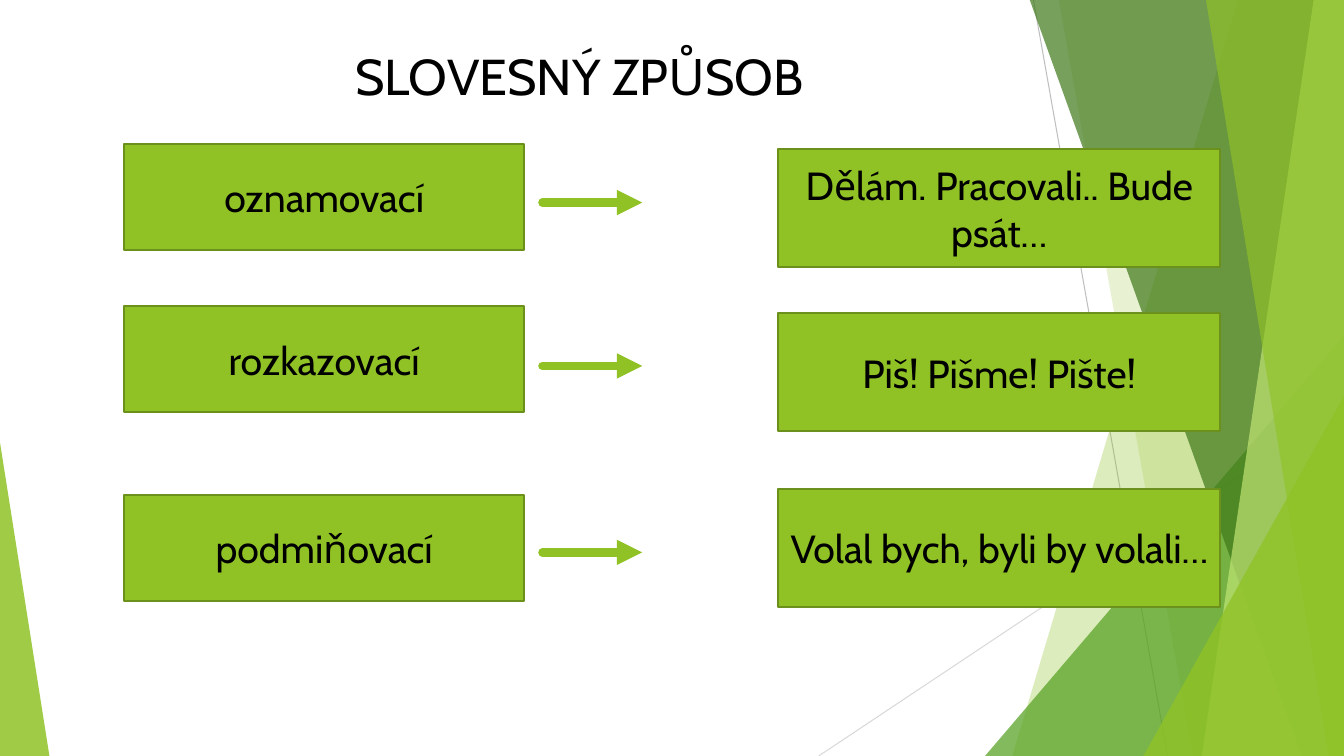
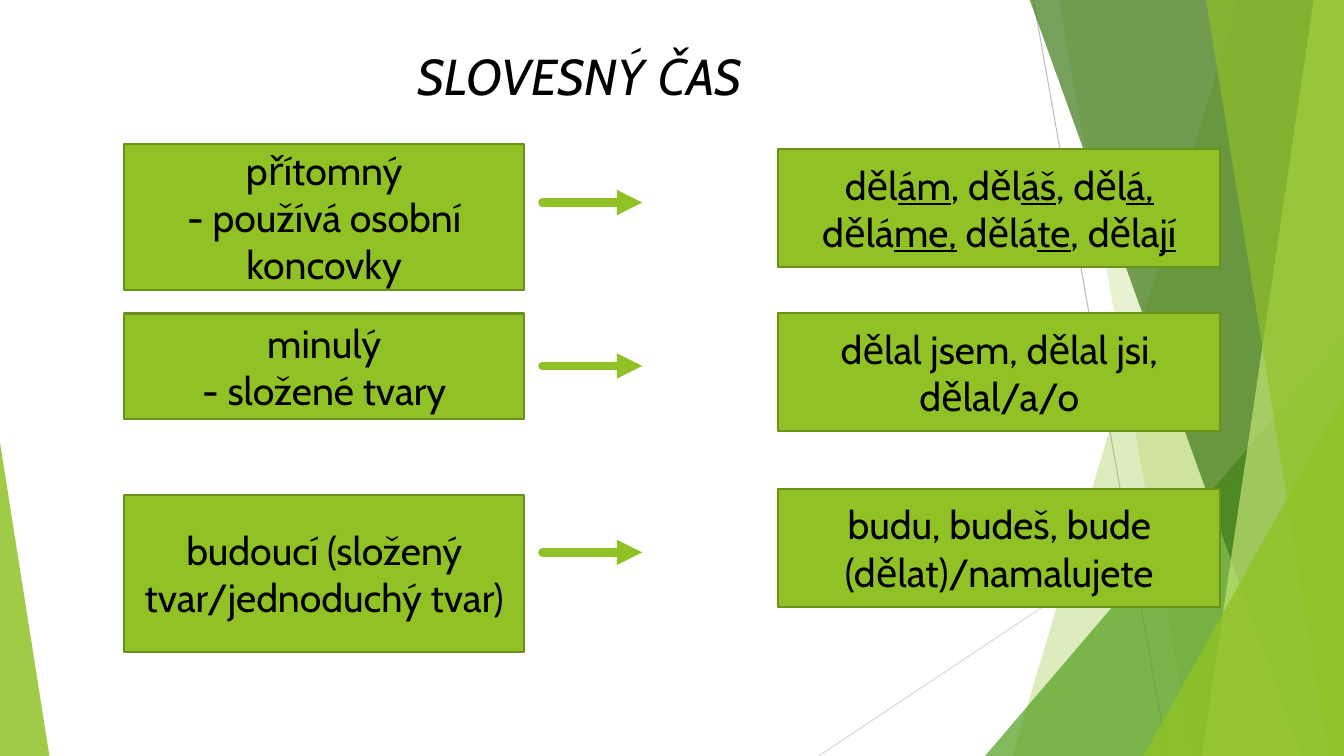
from lxml import etree
from pptx import Presentation
from pptx.dml.color import RGBColor
from pptx.enum.shapes import MSO_CONNECTOR, MSO_SHAPE
from pptx.enum.text import MSO_ANCHOR, PP_ALIGN
from pptx.oxml.ns import qn
from pptx.util import Pt

RECT, TRI = MSO_SHAPE.RECTANGLE, MSO_SHAPE.RIGHT_TRIANGLE
PEAK = MSO_SHAPE.ISOSCELES_TRIANGLE
LINE = MSO_CONNECTOR.STRAIGHT
MID, TOP = MSO_ANCHOR.MIDDLE, MSO_ANCHOR.TOP
CENTER = PP_ALIGN.CENTER

# Content: title, its format, then rows of (left text, top, height, right text)
# Text between underscores is underlined; a line break starts a paragraph
SLIDES = [
    ("SLOVESNÝ ZPŮSOB", {}, [
        ("oznamovací", 143, 105, "Dělám. Pracovali.. Bude psát…"),
        ("rozkazovací", 304, 105, "Piš! Pišme! Pište!"),
        ("podmiňovací", 491, 105, "Volal bych, byli by volali…"),
    ]),
    ("SLOVESNÝ ČAS", {"italic": True}, [
        ("přítomný\n- používá osobní koncovky", 143, 145,
         "děl_ám_, děl_áš_, děl_á, _dělá_me,_ dělá_te_, děla_jí_"),
        ("minulý\n- složené tvary", 311, 105,
         "dělal jsem, dělal jsi, dělal/a/o"),
        ("budoucí (složený tvar/jednoduchý tvar)", 491, 156,
         "budu, budeš, bude (dělat)/namalujete"),
    ]),
]

# Shared look, lengths in px (100 to the inch)
PX = 9144
WIDE, HIGH = 1333, 750
GREEN, EDGE, BLACK = "90C226", "6B901C", "000000"
FONT = {"name": "Cabin", "size": Pt(28)}
HEAD = {"name": "Cabin", "size": Pt(36)}
LEFT_X, LEFT_W = 123, 397
RIGHT_X, RIGHT_W, RIGHT_H = 772, 438, 117
RIGHT_Y = (148, 311, 485)
ARROW_Y = (201, 363, 548)
ARROW_X = (538, 637)

# Decoration, back to front
HAIRS = [((1025, 0, 1158, HIGH), "BFBFBF"), ((WIDE, 403, 812, HIGH), "D9D9D9")]
# Bands reach the right edge: top x, bottom x, colour, opacity
# Peaks: box, adjustment, colour, opacity
DECOR = [
    ("band", (1228, 1004), GREEN, 30),
    ("band", (1050, 1183), GREEN, 20),
    ("peak", (977, 333, 356, 417, 1), "54A021", 72),
    ("band", (1021, 1291), "3F7819", 70),
    ("band", (1303, 1192), "C0E474", 70),
    ("band", (1196, 1318), GREEN, 65),
    ("peak", (1134, 393, 199, 357, 1), GREEN, 80),
    ("peak", (0, 439, 49, 311, 0), GREEN, 85),
]


def px(*vals):
    return [v * PX for v in vals]


def rgb(code):
    return RGBColor.from_string(code)


def put(obj, vals):
    for key, val in vals.items():
        setattr(obj, key, val)


def paint(shape, code, alpha=100):
    shape.shadow.inherit = False
    shape.fill.solid()
    shape.fill.fore_color.rgb = rgb(code)
    if alpha < 100:
        tint = shape.element.spPr.find(qn("a:solidFill"))[0]
        etree.SubElement(tint, qn("a:alpha"), val=str(alpha * 1000))


def rule(slide, ends, code, width):
    line = slide.shapes.add_connector(LINE, *px(*ends))
    line.line.color.rgb = rgb(code)
    line.line.width = Pt(width)
    etree.SubElement(line.element.spPr, qn("a:effectLst"))
    return line


def arrow(slide, y):
    line = rule(slide, (ARROW_X[0], y, ARROW_X[1], y), GREEN, 6)
    ln = line.element.spPr.find(qn("a:ln"))
    ln.set("cap", "rnd")
    etree.SubElement(ln, qn("a:tailEnd"), type="triangle")


def write(shape, text, look, anchor):
    frame = shape.text_frame
    put(frame, {"word_wrap": True, "vertical_anchor": anchor})
    for i, row in enumerate(text.split("\n")):
        para = frame.add_paragraph() if i else frame.paragraphs[0]
        para.alignment = CENTER
        for j, part in enumerate(row.split("_")):
            if part:
                run = para.add_run()
                run.text = part
                put(run.font, look)
                run.font.color.rgb = rgb(BLACK)
                if j % 2:
                    run.font.underline = True


def box(slide, area, text):
    shape = slide.shapes.add_shape(RECT, *px(*area))
    paint(shape, GREEN)
    shape.line.color.rgb = rgb(EDGE)
    shape.line.width = Pt(1.5)
    write(shape, text, FONT, MID)


def decor(slide):
    for ends, code in HAIRS:
        rule(slide, ends, code, 0.75)
    for kind, dims, code, alpha in DECOR:
        if kind == "band":
            top, low = dims
            path = slide.shapes.build_freeform(top, -1, scale=PX)
            path.add_line_segments([(WIDE, -1), (WIDE, HIGH), (low, HIGH)])
            shape = path.convert_to_shape()
        else:
            shape = slide.shapes.add_shape(PEAK, *px(*dims[:4]))
            shape.adjustments[0] = dims[4]
        paint(shape, code, alpha)
        shape.line.fill.background()


def main():
    deck = Presentation()
    deck.slide_width, deck.slide_height = px(WIDE, HIGH)
    for title, style, rows in SLIDES:
        slide = deck.slides.add_slide(deck.slide_layouts[6])
        decor(slide)
        head = slide.shapes.add_textbox(*px(0, 40, 1150, 145))
        write(head, title, {**HEAD, **style}, TOP)
        # Rows: term, arrow, examples
        for (term, top, tall, sample), y, mid in zip(rows, RIGHT_Y, ARROW_Y):
            box(slide, (LEFT_X, top, LEFT_W, tall), term)
            arrow(slide, mid)
            box(slide, (RIGHT_X, y, RIGHT_W, RIGHT_H), sample)
    deck.save("out.pptx")


if __name__ == "__main__":
    main()
